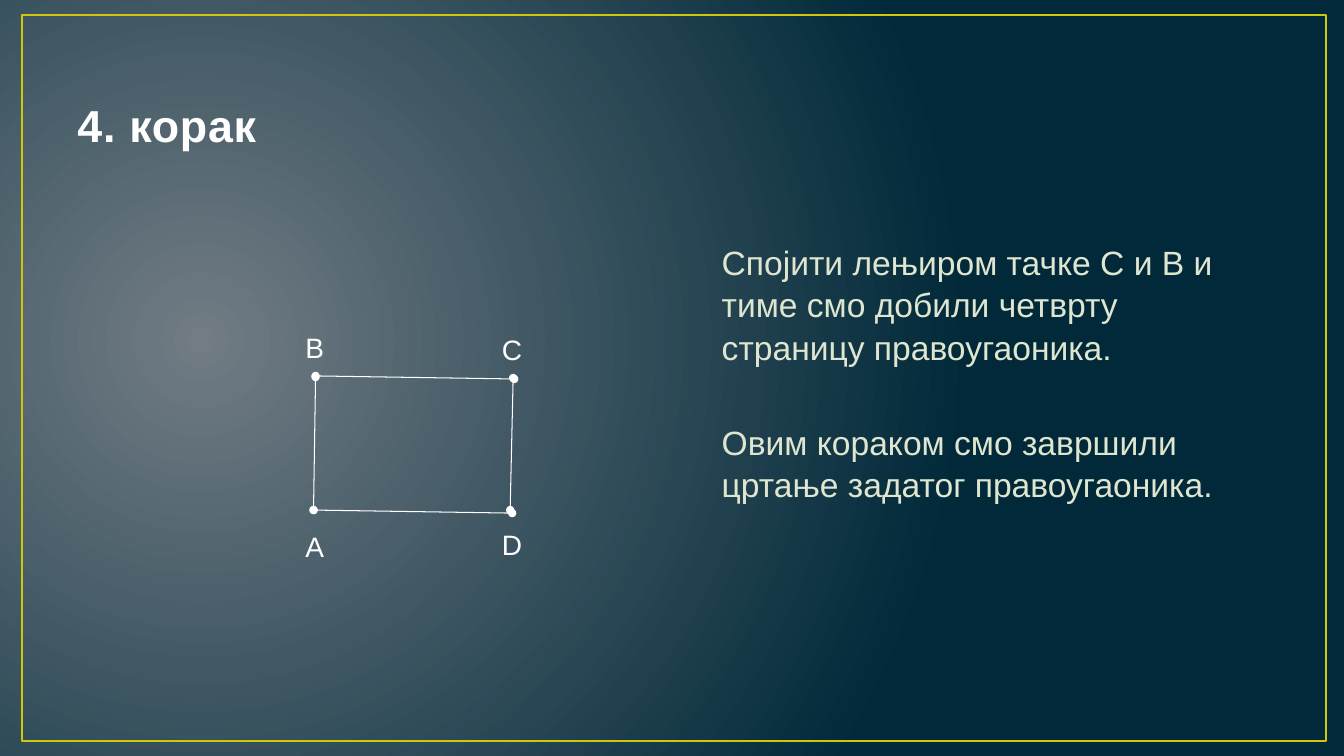
from lxml import etree
from pptx import Presentation
from pptx import util as u
from pptx.dml.color import RGBColor
from pptx.enum import shapes, text
from pptx.oxml import parse_xml
from pptx.oxml.ns import nsdecls, qn

WIDTH, HEIGHT = u.Inches(13.33), u.Inches(7.5)
FONT = "Arial"
COLORS = {
    "glow": "717C84",
    "night": "01293A",
    "frame": "CFC60D",
    "title": "FEFEFE",
    "title_edge": "384F55",
    "body": "DFE6D0",
    "drawing": "FFFFFF",
}

# Positions are percentages of the slide's width and height.
SIDES = {
    "AD": ((23.33, 67.47), (38.11, 67.87)),
    "BC": ((23.48, 49.73), (38.26, 50.13)),
    "AB": ((23.33, 67.47), (23.48, 49.87)),
    "DC": ((37.96, 67.47), (38.18, 50)),
}
VERTEX_LABELS = {
    "А": (21.98, 69.33),
    "D": (36.61, 69.07),
    "C": (36.61, 43.33),
    "B": (21.98, 43.07),
}
STEPS = [
    "Спојити лењиром тачке C и B и тиме смо добили четврту страницу правоугаоника.",
    "Овим кораком смо завршили цртање задатог правоугаоника.",
]


def across(percent):
    return round(WIDTH * percent / 100)


def down(percent):
    return round(HEIGHT * percent / 100)


def box(left, top, width, height):
    return across(left), down(top), across(width), down(height)


def color(name):
    return RGBColor.from_string(COLORS[name])


def add_glow_background(slide):
    """Radial gradient centred left of the middle."""
    background = parse_xml(
        f'<p:bg {nsdecls("p", "a")}><p:bgPr><a:gradFill rotWithShape="1"><a:gsLst>'
        f'<a:gs pos="0"><a:srgbClr val="{COLORS["glow"]}"/></a:gs>'
        f'<a:gs pos="100000"><a:srgbClr val="{COLORS["night"]}"/></a:gs></a:gsLst>'
        '<a:path path="circle"><a:fillToRect l="15000" t="50000" r="85000" b="60000"/>'
        '</a:path></a:gradFill><a:effectLst/></p:bgPr></p:bg>')
    slide.element.cSld.insert(0, background)


def add_frame(slide):
    frame = slide.shapes.add_shape(shapes.MSO_SHAPE.RECTANGLE, *box(1.65, 2, 97, 96))
    frame.shadow.inherit = False
    frame.fill.background()
    frame.line.color.rgb = color("frame")
    frame.line.width = u.Pt(1.5)


def add_text(slide, place, lines, size, ink, bold=False):
    frame = slide.shapes.add_textbox(*place).text_frame
    frame.word_wrap = True
    frame.text = "\n".join(lines)
    for paragraph in frame.paragraphs:
        paragraph.font.name = FONT
        paragraph.font.size = u.Pt(size)
        paragraph.font.bold = bold
        paragraph.font.color.rgb = color(ink)
    return frame


def add_title(slide, words):
    frame = add_text(slide, box(5.03, 4, 90, 16.67), [words], 32, "title", bold=True)
    frame.vertical_anchor = text.MSO_ANCHOR.BOTTOM
    properties = frame.paragraphs[0].runs[0].font._element
    properties.set("spc", "50")
    edge = etree.SubElement(properties, qn("a:ln"), w=str(u.Pt(1.05)))
    fill = etree.SubElement(edge, qn("a:solidFill"))
    etree.SubElement(fill, qn("a:srgbClr"), val=COLORS["title_edge"])


def add_steps(slide, steps):
    frame = add_text(slide, box(52.96, 31.07, 41.5, 55), steps, 24, "body")
    for paragraph in frame.paragraphs:
        paragraph.line_spacing = 1.05
    for paragraph in frame.paragraphs[1:]:
        paragraph.space_before = u.Pt(38)


def add_side(slide, start, end):
    """Line with a round dot at each end."""
    side = slide.shapes.add_connector(
        shapes.MSO_CONNECTOR.STRAIGHT,
        across(start[0]), down(start[1]), across(end[0]), down(end[1]))
    side.line.color.rgb = color("drawing")
    side.line.width = u.Pt(0.75)
    for tip in ("a:headEnd", "a:tailEnd"):
        etree.SubElement(side.line._get_or_add_ln(), qn(tip), type="oval")
    etree.SubElement(side._element.spPr, qn("a:effectLst"))


def main():
    deck = Presentation()
    deck.slide_width, deck.slide_height = WIDTH, HEIGHT
    slide = deck.slides.add_slide(deck.slide_layouts[6])
    add_glow_background(slide)
    add_frame(slide)
    add_title(slide, "4. корак")
    add_steps(slide, STEPS)
    for start, end in SIDES.values():
        add_side(slide, start, end)
    for letter, (left, top) in VERTEX_LABELS.items():
        add_text(slide, box(left, top, 3, 5.87), [letter], 20, "drawing")
    deck.save("out.pptx")


if __name__ == "__main__":
    main()
